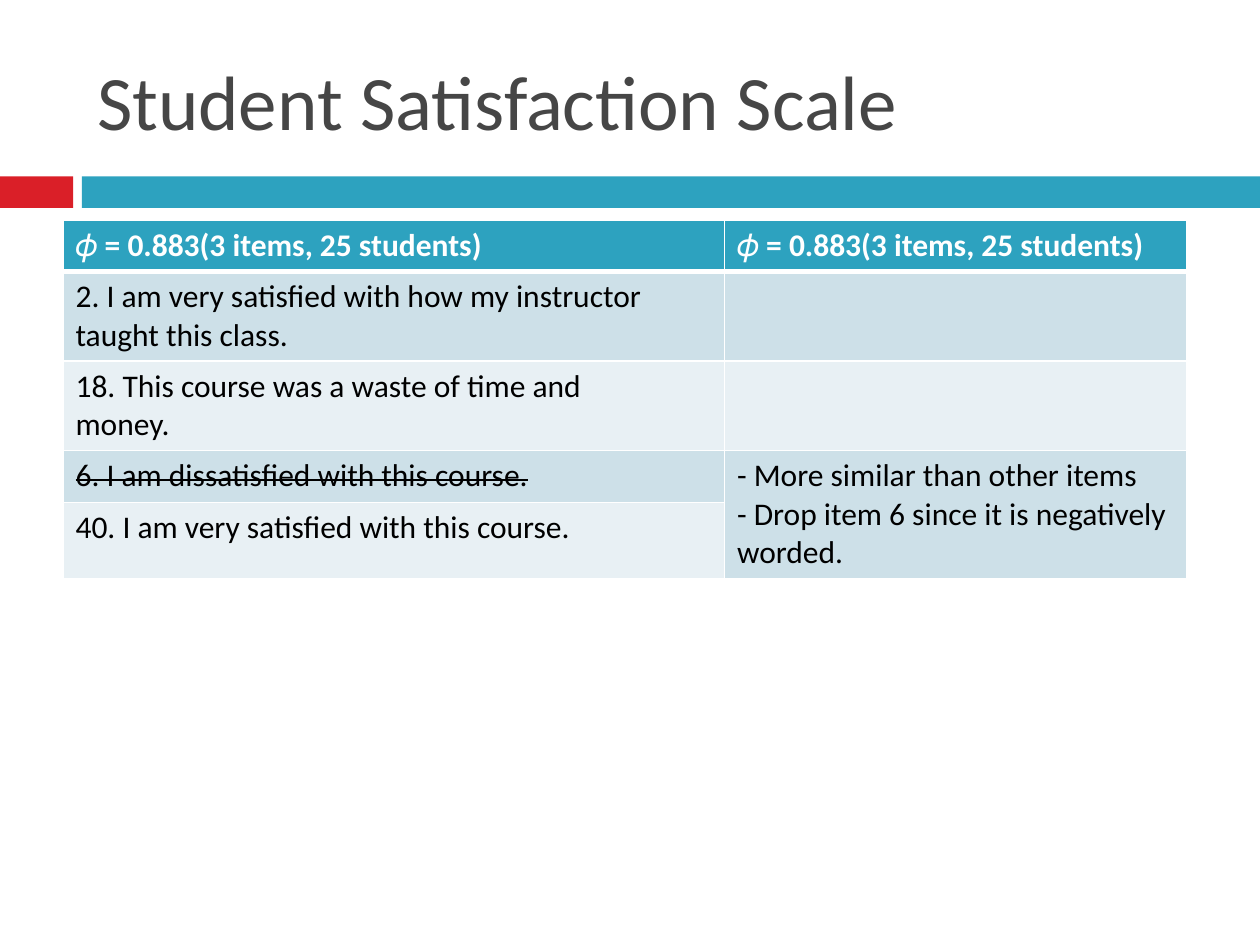
"""Build the Student Satisfaction Scale slide."""
from lxml.etree import SubElement
from pptx import Presentation
from pptx.dml.color import RGBColor
from pptx.enum.shapes import MSO_SHAPE as Shape
from pptx.enum.text import MSO_ANCHOR as Anchor, PP_ALIGN as Align
from pptx.oxml.ns import qn
from pptx.util import Inches, Pt

FONT = "Calibri"
RED, TEAL, WHITE, BLACK, GREY = "DA1F28", "2DA2BF", "FFFFFF", "000000", "464646"
BANDS = ["CDE0E8", "E8F0F4"]
TITLE = "Student Satisfaction Scale"
BARS = [(0, 0.58, RED), (0.65, 9.35, TEAL)]
HEADING = ["𝜙 = 0.883(3 items, 25 students)"]
ROWS = [
    (HEADING, HEADING),
    (["2. I am very satisfied with how my instructor", "taught this class."], []),
    (["18. This course was a waste of time and", "money."], []),
    (["6. I am dissatisfied with this course."],
     ["- More similar than other items",
      "- Drop item 6 since it is negatively worded."]),
    (["40. I am very satisfied with this course."], []),
]
STRUCK_CELL = (3, 0)
MERGED = ((3, 1), (4, 1))
WIDTHS = [5.25, 3.67]
HEIGHTS = [0.4, 0.71, 0.71, 0.41, 0.6]


def paint(fill, color):
    fill.solid()
    fill.fore_color.rgb = RGBColor.from_string(color)


def style(font, size, color, bold=False):
    font.name, font.size, font.bold = FONT, Pt(size), bold
    font.color.rgb = RGBColor.from_string(color)


def write(frame, lines, size, color, bold=False, struck=False):
    for index, line in enumerate(lines):
        para = frame.paragraphs[0] if index == 0 else frame.add_paragraph()
        para.alignment = Align.LEFT
        span = para.add_run()
        span.text = line
        style(span.font, size, color, bold)
        if struck:
            span._r.get_or_add_rPr().set("strike", "sngStrike")
    if not lines:
        style(frame.paragraphs[0].font, size, color)


def add_borders(cell, bottom, top):
    properties = cell._tc.get_or_add_tcPr()
    for side, width in (("L", 1), ("R", 1), ("T", top), ("B", bottom)):
        line = SubElement(properties, qn(f"a:ln{side}"), w=str(Pt(width)))
        fill = SubElement(line, qn("a:solidFill"))
        SubElement(fill, qn("a:srgbClr"), val=WHITE)


def add_bars(page):
    for left, width, color in BARS:
        bar = page.shapes.add_shape(
            Shape.RECTANGLE, Inches(left), Inches(1.4), Inches(width), Inches(0.25))
        bar.shadow.inherit = False
        paint(bar.fill, color)
        bar.line.fill.background()


def add_title(page):
    title = page.shapes.title
    title.left, title.top = Inches(0.67), Inches(0.25)
    title.width, title.height = Inches(8.92), Inches(1.08)
    title.text_frame.vertical_anchor = Anchor.MIDDLE
    write(title.text_frame, [TITLE], 44, GREY)


def add_items(page):
    table = page.shapes.add_table(
        len(ROWS), len(WIDTHS), Inches(0.5), Inches(1.75),
        Inches(sum(WIDTHS)), Inches(sum(HEIGHTS))).table
    for column, width in zip(table.columns, WIDTHS):
        column.width = Inches(width)
    for row, height in zip(table.rows, HEIGHTS):
        row.height = Inches(height)
    start, end = MERGED
    table.cell(*start).merge(table.cell(*end))
    for r, row in enumerate(ROWS):
        header = r == 0
        for c, lines in enumerate(row):
            cell = table.cell(r, c)
            add_borders(cell, 3 if header else 1, 3 if r == 1 else 1)
            paint(cell.fill, TEAL if header else BANDS[(r - 1) % 2])
            write(cell.text_frame, lines, 18, WHITE if header else BLACK,
                  header, (r, c) == STRUCK_CELL)


def main():
    deck = Presentation()
    deck.slide_width, deck.slide_height = Inches(10), Inches(7.5)
    page = deck.slides.add_slide(deck.slide_layouts[5])
    paint(page.background.fill, WHITE)
    add_bars(page)
    add_title(page)
    add_items(page)
    deck.save("out.pptx")


if __name__ == "__main__":
    main()
